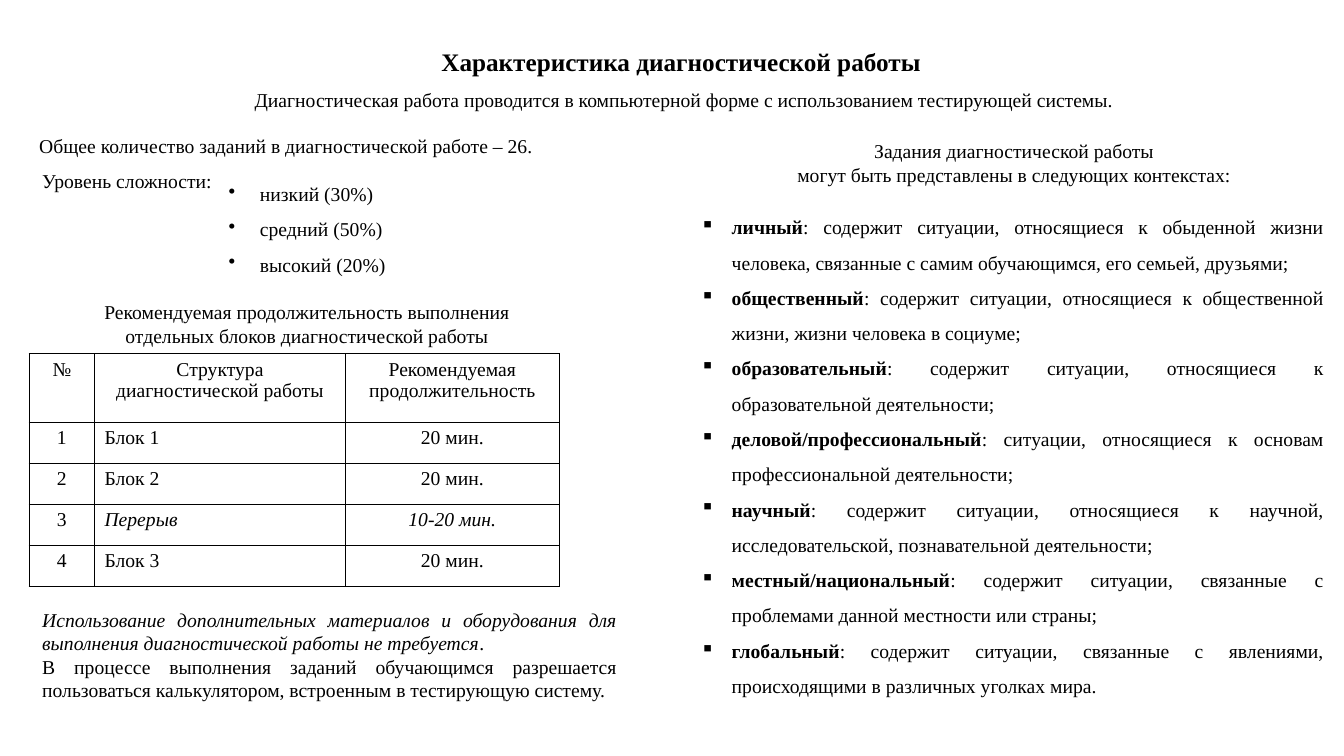
import dataclasses

import lxml.etree
import pptx
import pptx.dml.color
import pptx.enum.text
import pptx.oxml.ns
import pptx.util

ALIGN = pptx.enum.text.PP_ALIGN


@dataclasses.dataclass(frozen=True)
class Theme:
    ink: str = "000000"
    paper: str = "FFFFFF"
    font: str = "Times New Roman"
    title_size: int = 18
    body_size: int = 14
    border_width: int = 1
    indent: float = 0.31
    list_spacing: float = 1.5


def add_xml(parent, tag, **attributes):
    return lxml.etree.SubElement(parent, pptx.oxml.ns.qn(tag), attributes)


class SlideBuilder:
    """Places elements by percentages of the slide's width and height."""

    def __init__(self, presentation, theme):
        self.theme = theme
        self.width = presentation.slide_width
        self.height = presentation.slide_height
        self.slide = presentation.slides.add_slide(presentation.slide_layouts[6])
        background = self.slide.background.fill
        background.solid()
        background.fore_color.rgb = pptx.dml.color.RGBColor.from_string(theme.paper)

    def across(self, percent):
        return pptx.util.Emu(round(self.width * percent / 100))

    def down(self, percent):
        return pptx.util.Emu(round(self.height * percent / 100))

    def bullet(self, paragraph, mark):
        indent = pptx.util.Inches(self.theme.indent)
        properties = paragraph._p.get_or_add_pPr()
        properties.set("marL", str(indent))
        properties.set("indent", str(-indent))
        add_xml(properties, "a:buChar", char=mark)
        paragraph.line_spacing = self.theme.list_spacing

    def fill_paragraph(self, paragraph, content, align=ALIGN.LEFT, size=None,
                       bold=False, italic=False):
        """Content is a string, or (text, font overrides) pairs for mixed runs."""
        paragraph.alignment = align
        font = paragraph.font
        font.name = self.theme.font
        font.size = pptx.util.Pt(size or self.theme.body_size)
        font.color.rgb = pptx.dml.color.RGBColor.from_string(self.theme.ink)
        font.bold, font.italic = bold, italic
        pieces = [(content, {})] if isinstance(content, str) else content
        for words, overrides in pieces:
            run = paragraph.add_run()
            run.text = words
            run.font.bold = overrides.get("bold")
            run.font.italic = overrides.get("italic")

    def text(self, place, paragraphs, mark=None, wrap=True, **style):
        left, top, width, height = place
        frame = self.slide.shapes.add_textbox(
            self.across(left), self.down(top), self.across(width), self.down(height)
        ).text_frame
        frame.word_wrap = wrap
        frame.auto_size = pptx.enum.text.MSO_AUTO_SIZE.SHAPE_TO_FIT_TEXT
        for index, content in enumerate(paragraphs):
            paragraph = frame.add_paragraph() if index else frame.paragraphs[0]
            if mark:
                self.bullet(paragraph, mark)
            self.fill_paragraph(paragraph, content, **style)

    def border(self, cell):
        for side in ("a:lnL", "a:lnR", "a:lnT", "a:lnB"):
            line = add_xml(cell._tc.get_or_add_tcPr(), side,
                           w=str(pptx.util.Pt(self.theme.border_width)))
            add_xml(add_xml(line, "a:solidFill"), "a:srgbClr", val=self.theme.ink)

    def table(self, left, top, columns, row_heights, rows, italic_row):
        table = self.slide.shapes.add_table(
            len(rows), len(columns), self.across(left), self.down(top),
            self.across(sum(columns)), self.down(sum(row_heights))
        ).table
        table.first_row = table.horz_banding = False
        for column, width in zip(table.columns, columns):
            column.width = self.across(width)
        for row, height in zip(table.rows, row_heights):
            row.height = self.down(height)
        for r, values in enumerate(rows):
            for c, value in enumerate(values):
                cell = table.cell(r, c)
                self.border(cell)
                cell.fill.background()
                self.fill_paragraph(cell.text_frame.paragraphs[0], value,
                                    align=ALIGN.LEFT if r and c == 1 else ALIGN.CENTER,
                                    italic=r == italic_row and c > 0)


CONTEXTS = {
    "личный": "содержит ситуации, относящиеся к обыденной жизни человека, "
              "связанные с самим обучающимся, его семьей, друзьями;",
    "общественный": "содержит ситуации, относящиеся к общественной жизни, "
                    "жизни человека в социуме;",
    "образовательный": "содержит ситуации, относящиеся к образовательной деятельности;",
    "деловой/профессиональный": "ситуации, относящиеся к основам "
                                "профессиональной деятельности;",
    "научный": "содержит ситуации, относящиеся к научной, "
               "исследовательской, познавательной деятельности;",
    "местный/национальный": "содержит ситуации, связанные с проблемами "
                            "данной местности или страны;",
    "глобальный": "содержит ситуации, связанные с явлениями, "
                  "происходящими в различных уголках мира.",
}

BLOCKS = [
    ("№", "Структура диагностической работы", "Рекомендуемая продолжительность"),
    ("1", "Блок 1", "20 мин."),
    ("2", "Блок 2", "20 мин."),
    ("3", "Перерыв", "10-20 мин."),
    ("4", "Блок 3", "20 мин."),
]


def main():
    presentation = pptx.Presentation()
    presentation.slide_width = pptx.util.Inches(13.33)
    presentation.slide_height = pptx.util.Inches(7.5)
    theme = Theme()
    page = SlideBuilder(presentation, theme)

    page.text((32.1, 5.47, 37.6, 5.33), ["Характеристика диагностической работы"],
              wrap=False, size=theme.title_size, bold=True)
    page.text((3.68, 10.93, 94.45, 4.53),
              ["Диагностическая работа проводится в компьютерной форме "
               "с использованием тестирующей системы."], align=ALIGN.CENTER)

    page.text((2.18, 17.07, 39.23, 4.53),
              ["Общее количество заданий в диагностической работе – 26."])
    page.text((2.4, 21.73, 15.3, 4.53), ["Уровень сложности:"])
    page.text((16.28, 21.87, 13.2, 15.47),
              ["низкий (30%)", "средний (50%)", "высокий (20%)"], mark="•")

    page.text((5.78, 39.07, 34.13, 7.6),
              ["Рекомендуемая продолжительность выполнения "
               "отдельных блоков диагностической работы"], align=ALIGN.CENTER)
    page.table(2.18, 46.8, (4.85, 18.68, 15.9), (9.07,) + (5.42,) * 4,
               BLOCKS, italic_row=3)
    page.text((2.4, 79.73, 44.26, 13.87), [
        [("Использование дополнительных материалов и оборудования для выполнения "
          "диагностической работы не требуется", {"italic": True}), (".", {})],
        "В процессе выполнения заданий обучающимся разрешается пользоваться "
        "калькулятором, встроенным в тестирующую систему.",
    ], align=ALIGN.JUSTIFY)

    page.text((57.68, 17.73, 35.56, 7.6),
              ["Задания диагностической работы",
               "могут быть представлены в следующих контекстах:"], align=ALIGN.CENTER)
    page.text((51.38, 26.27, 47.86, 67.33),
              [[(name, {"bold": True}), (f": {meaning}", {})]
               for name, meaning in CONTEXTS.items()],
              mark="▪", align=ALIGN.JUSTIFY)

    presentation.save("out.pptx")


if __name__ == "__main__":
    main()
